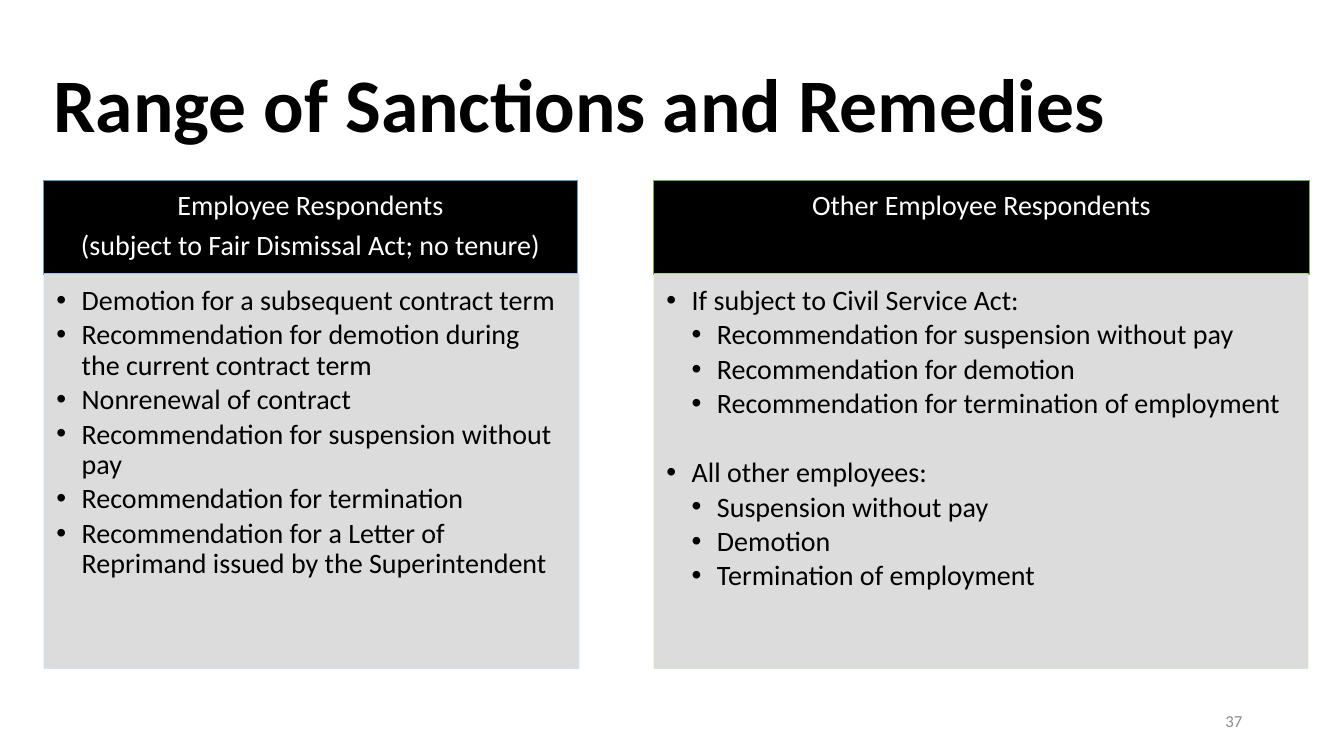
from pptx import Presentation
from pptx.dml.color import RGBColor as RGB
from pptx.enum.shapes import MSO_SHAPE as Shape
from pptx.enum.text import MSO_ANCHOR as Anchor, PP_ALIGN as Align
from pptx.oxml.ns import qn
from pptx.util import Inches, Pt
from lxml.etree import SubElement as Sub

FONT = "Calibri"
HUES = {
    "black": "000000",
    "white": "FFFFFF",
    "panel": "D9D9D9",
    "blue": "5B9BD5",
    "pale blue": "D2DEEF",
    "green": "70AD47",
    "pale green": "D5E3CF",
    "grey": "8C8C8C",
}
TOP, HEAD, BODY = 1.79, 0.93, 3.91
STEP = 0.25

STAFF = [
    (1, "Demotion for a subsequent contract term"),
    (1, "Recommendation for demotion during the current contract term"),
    (1, "Nonrenewal of contract"),
    (1, "Recommendation for suspension without pay"),
    (1, "Recommendation for termination"),
    (1, "Recommendation for a Letter of Reprimand issued by the Superintendent"),
]
OTHERS = [
    (1, "If subject to Civil Service Act:"),
    (2, "Recommendation for suspension without pay"),
    (2, "Recommendation for demotion"),
    (2, "Recommendation for termination of employment"),
    (1, "All other employees:"),
    (2, "Suspension without pay"),
    (2, "Demotion"),
    (2, "Termination of employment"),
]


def hue(name):
    return RGB.from_string(HUES[name])


def fade(fill):
    for tint in fill.iter(qn("a:srgbClr")):
        Sub(tint, qn("a:alpha"), val="90000")


def set_frame(frame, anchor, pads):
    frame.word_wrap = True
    frame.vertical_anchor = anchor
    left, top, right, low = (Inches(pad) for pad in pads)
    frame.margin_left, frame.margin_top = left, top
    frame.margin_right, frame.margin_bottom = right, low


def add_line(frame, first, text, size, color, bold=False):
    line = frame.paragraphs[0] if first else frame.add_paragraph()
    run = line.add_run()
    run.text = text
    run.font.name = FONT
    run.font.size = Pt(size)
    run.font.bold = bold
    run.font.color.rgb = hue(color)
    return line


def add_label(slide, at, text, size, color, bold=False):
    box = slide.shapes.add_textbox(*(Inches(n) for n in at))
    set_frame(box.text_frame, Anchor.MIDDLE, (0.1, 0.05, 0.1, 0.05))
    return add_line(box.text_frame, True, text, size, color, bold)


def add_rect(slide, at, fill, edge):
    rect = slide.shapes.add_shape(Shape.RECTANGLE, *(Inches(n) for n in at))
    rect.shadow.inherit = False
    rect.fill.solid()
    rect.fill.fore_color.rgb = hue(fill)
    rect.line.color.rgb = hue(edge)
    rect.line.width = Pt(1)
    return rect


def add_head(slide, at, edge, lines):
    rect = add_rect(slide, at, "black", edge)
    frame = rect.text_frame
    set_frame(frame, Anchor.TOP, (0.16, 0.11, 0.16, 0.05))
    for i, text in enumerate(lines):
        line = add_line(frame, i == 0, text, 20, "white")
        line.alignment = Align.CENTER
        line.line_spacing = 0.9
        line.space_after = Pt(7)


def add_bullet(line, level):
    props = line._p.get_or_add_pPr()
    props.set("marL", str(Inches(STEP * level)))
    props.set("indent", str(Inches(-STEP)))
    Sub(props, qn("a:buFont"), typeface="Arial")
    Sub(props, qn("a:buChar"), char="•")


def add_body(slide, at, edge, items):
    rect = add_rect(slide, at, "panel", edge)
    fade(rect._element.spPr)
    frame = rect.text_frame
    set_frame(frame, Anchor.TOP, (0.12, 0.12, 0.16, 0.17))
    nexts = [level for level, _ in items[1:]] + [1]
    for i, (level, text) in enumerate(items):
        line = add_line(frame, i == 0, text, 20, "black")
        line.alignment = Align.LEFT
        line.line_spacing = 0.9
        line.space_after = Pt(27.5 if level > nexts[i] else 3)
        line.level = level
        add_bullet(line, level)


def add_panel(slide, left, widths, tone, lines, items):
    wide, base = widths
    add_head(slide, (left, TOP, wide, HEAD), tone, lines)
    add_body(slide, (left + 0.01, TOP + HEAD, base, BODY), "pale " + tone, items)


def main():
    deck = Presentation()
    deck.slide_width, deck.slide_height = Inches(13.33), Inches(7.5)
    slide = deck.slides.add_slide(deck.slide_layouts[6])
    title = add_label(slide, (0.43, 0.35, 12.48, 1.45),
                      "Range of Sanctions and Remedies", 54, "black", True)
    title.line_spacing = 0.9
    add_panel(slide, 0.43, (5.3, 5.3), "blue",
              ["Employee Respondents",
               "(subject to Fair Dismissal Act; no tenure)"], STAFF)
    add_panel(slide, 6.48, (6.51, 6.48), "green",
              ["Other Employee Respondents"], OTHERS)
    page = add_label(slide, (9.42, 6.95, 3, 0.4), "37", 12, "grey")
    page.alignment = Align.RIGHT
    deck.save("out.pptx")


if __name__ == "__main__":
    main()
